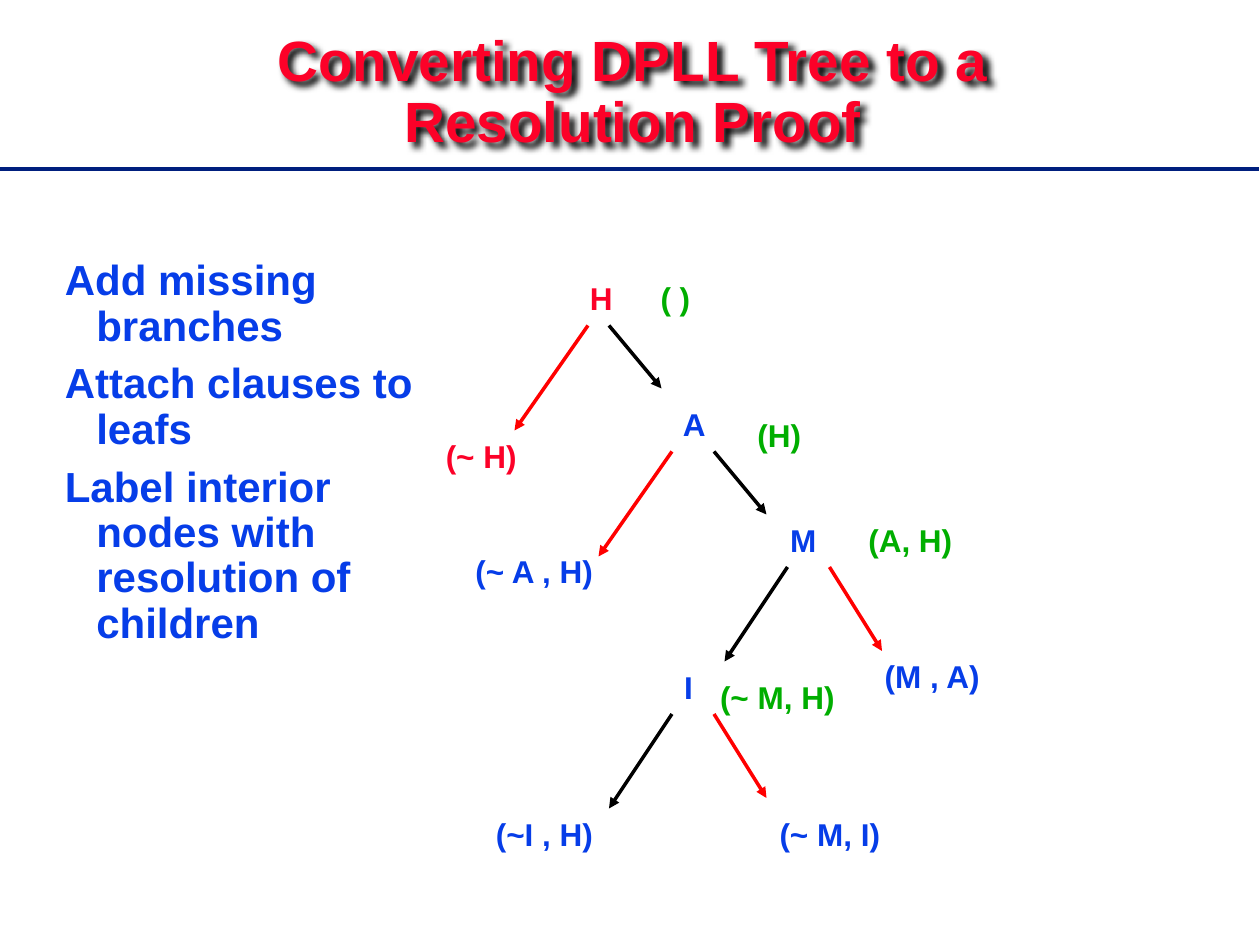
from typing import NamedTuple

from lxml import etree
from pptx import Presentation
from pptx.dml.color import RGBColor
from pptx.enum.shapes import MSO_CONNECTOR
from pptx.enum.text import MSO_ANCHOR, MSO_AUTO_SIZE, PP_ALIGN
from pptx.oxml.ns import qn
from pptx.util import Pt

STRAIGHT = MSO_CONNECTOR.STRAIGHT
MIDDLE = MSO_ANCHOR.MIDDLE
TOP = MSO_ANCHOR.TOP
FIT = MSO_AUTO_SIZE.SHAPE_TO_FIT_TEXT
FIXED = MSO_AUTO_SIZE.NONE
CENTER = PP_ALIGN.CENTER
LEFT = PP_ALIGN.LEFT

RED = RGBColor(0xFC, 0x01, 0x28)
BLUE = RGBColor(0x06, 0x3D, 0xE8)
GREEN = RGBColor(0x00, 0xAE, 0x00)
NAVY = RGBColor(0x00, 0x1F, 0x7E)
BLACK = RGBColor(0x00, 0x00, 0x00)
BRIGHT = RGBColor(0xFF, 0x00, 0x00)


class Label(NamedTuple):
    text: str
    left: float
    top: float
    width: float
    color: RGBColor = BLUE


class Branch(NamedTuple):
    x1: float
    y1: float
    x2: float
    y2: float
    color: RGBColor


TITLE = "Converting DPLL Tree to a Resolution Proof"
STEPS = [
    "Add missing branches",
    "Attach clauses to leafs",
    "Label interior nodes with resolution of children",
]
NODES = [
    Label("H", 329.8, 156, 27.4, RED),
    Label("A", 383, 228, 27.4),
    Label("M", 444.2, 294, 29.5),
    Label("I", 383.8, 378, 19.4),
]
LEAVES = [
    Label("(~ H)", 246.2, 246, 57.6, RED),
    Label("(~ A , H)", 264.2, 312, 82.1),
    Label("(M , A)", 498.2, 372, 69.1),
    Label("(~I , H)", 275.8, 462, 70.6),
    Label("(~ M, I)", 437.8, 462, 72.7),
]
CLAUSES = [
    Label("( )", 370.1, 156, 31.7, GREEN),
    Label("(H)", 425.5, 234, 39.6, GREEN),
    Label("(A, H)", 488.9, 294, 62.6, GREEN),
    Label("(~ M, H)", 403.9, 384, 80.6, GREEN),
]
TREE = [
    Branch(336, 186, 294, 246, BRIGHT),
    Branch(348, 186, 378, 222, BLACK),
    Branch(384, 258, 342, 318, BRIGHT),
    Branch(408, 258, 438, 294, BLACK),
    Branch(450, 324, 414, 378, BLACK),
    Branch(474, 324, 504, 372, BRIGHT),
    Branch(384, 408, 348, 462, BLACK),
    Branch(408, 408, 438, 456, BRIGHT),
]


def assign(target, values: dict) -> None:
    for name, value in values.items():
        setattr(target, name, value)


def add_text(slide, lines: list[str], box: tuple, size: float,
             color: RGBColor, frame: dict, para: dict):
    shape = slide.shapes.add_textbox(*map(Pt, box))
    body = shape.text_frame
    assign(body, frame)
    body.text = "\n".join(lines)
    for item in body.paragraphs:
        assign(item, para)
        font = item.runs[0].font
        assign(font, {"name": "Arial", "size": Pt(size), "bold": True})
        font.color.rgb = color
    return shape


def add_label(slide, label: Label) -> None:
    box = (label.left, label.top, label.width, 28.8)
    add_text(slide, [label.text], box, 18, label.color,
             {"word_wrap": False, "auto_size": FIT}, {"alignment": CENTER})


def add_line(slide, branch: Branch, arrow: bool = True) -> None:
    ends = map(Pt, branch[:4])
    wire = slide.shapes.add_connector(STRAIGHT, *ends)
    wire.line.color.rgb = branch.color
    wire.line.width = Pt(2)
    props = wire.element.spPr
    etree.SubElement(props, qn("a:effectLst"))
    if arrow:
        etree.SubElement(props.find(qn("a:ln")), qn("a:tailEnd"), type="triangle")


def add_glow(shape) -> None:
    effect = etree.SubElement(shape.element.spPr, qn("a:effectLst"))
    shade = etree.SubElement(effect, qn("a:outerShdw"), blurRad=str(Pt(4)),
                             dist=str(Pt(3)), dir="2700000")
    etree.SubElement(shade, qn("a:srgbClr"), val="000000")


def main() -> None:
    deck = Presentation()
    assign(deck, {"slide_width": Pt(720), "slide_height": Pt(540)})
    slide = deck.slides.add_slide(deck.slide_layouts[6])

    add_line(slide, Branch(0, 96.6, 719.3, 96.6, NAVY), arrow=False)
    title = add_text(slide, [TITLE], (78.5, 18, 566, 71.3), 32.4, RED,
                     {"word_wrap": True, "auto_size": FIXED,
                      "vertical_anchor": MIDDLE},
                     {"alignment": CENTER, "line_spacing": 0.9})
    add_glow(title)

    steps = add_text(slide, STEPS, (30, 144.7, 216, 316.8), 24, BLUE,
                     {"word_wrap": True, "auto_size": FIXED,
                      "vertical_anchor": TOP},
                     {"alignment": LEFT, "line_spacing": 0.9,
                      "space_before": Pt(7.2)})
    for item in steps.text_frame.paragraphs:
        props = item._p.get_or_add_pPr()
        props.set("marL", str(Pt(18)))
        props.set("indent", str(-Pt(18)))

    for branch in TREE:
        add_line(slide, branch)
    for label in NODES + LEAVES + CLAUSES:
        add_label(slide, label)

    deck.save("out.pptx")


if __name__ == "__main__":
    main()
